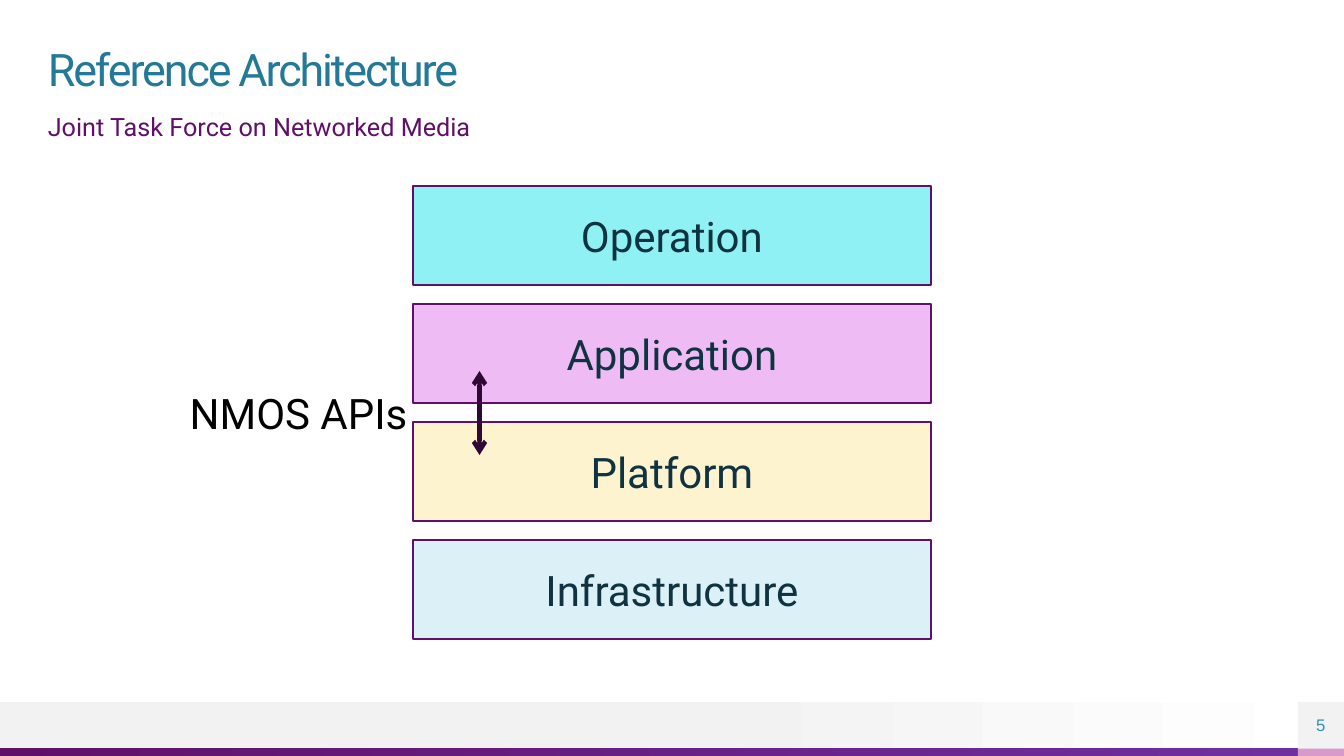
from lxml import etree
from pptx import Presentation
from pptx.dml.color import RGBColor
from pptx.enum.shapes import MSO_CONNECTOR, MSO_SHAPE
from pptx.enum.text import MSO_ANCHOR, MSO_AUTO_SIZE, PP_ALIGN
from pptx.oxml.ns import qn
from pptx.util import Pt

RECTANGLE = MSO_SHAPE.RECTANGLE
STRAIGHT = MSO_CONNECTOR.STRAIGHT
TOP, MIDDLE = MSO_ANCHOR.TOP, MSO_ANCHOR.MIDDLE
LEFT, CENTER = PP_ALIGN.LEFT, PP_ALIGN.CENTER
NO_FIT = MSO_AUTO_SIZE.NONE
GROW = MSO_AUTO_SIZE.SHAPE_TO_FIT_TEXT

# Content
TITLE = "Reference Architecture"
SUBTITLE = "Joint Task Force on Networked Media"
LAYERS = ["Operation", "Application", "Platform", "Infrastructure"]
API_LABEL = "NMOS APIs"
PAGE_NUMBER = "5"

COLORS = {
    "title": "237997", "purple": "601069", "violet": "7030A0",
    "pink": "D79ACB", "gray": "F2F2F2", "white": "FFFFFF",
    "number": "2C94BA", "layer text": "0F3340", "black": "000000",
    "arrow": "300834", "Operation": "90F1F4", "Application": "EFBBF5",
    "Platform": "FDF4CF", "Infrastructure": "DCF0F7",
}

# Layout in points
WIDTH, HEIGHT = 1152, 648
MARGIN, TEXT_WIDTH = 41, 1071.4
FOOTER_TOP, FOOTER_HEIGHT = 601.5, 40
STRIP_HEIGHT = HEIGHT - FOOTER_TOP - FOOTER_HEIGHT
NUMBER_WIDTH = 39.6
NUMBER_LEFT = WIDTH - NUMBER_WIDTH
LAYER_LEFT, LAYER_TOP = 354, 159.5
LAYER_WIDTH, LAYER_HEIGHT, LAYER_STEP = 444, 85, 101.15
ARROW_X, ARROW_TOP, ARROW_BOTTOM = 411, 318, 390


def color(name):
    return RGBColor.from_string(COLORS[name])


def points(*lengths):
    return [Pt(length) for length in lengths]


def write(shape, text, font, size, color_name, align=LEFT, anchor=MIDDLE):
    frame = shape.text_frame
    frame.vertical_anchor = anchor
    paragraph = frame.paragraphs[0]
    paragraph.text = text
    paragraph.alignment = align
    paragraph.font.name = font
    paragraph.font.size = Pt(size)
    paragraph.font.color.rgb = color(color_name)
    return paragraph


def remove_insets(shape):
    frame = shape.text_frame
    frame.margin_left = frame.margin_right = 0
    frame.margin_top = frame.margin_bottom = 0


def add_rectangle(box, fill_name):
    shape = slide.shapes.add_shape(RECTANGLE, *points(*box))
    shape.shadow.inherit = False
    shape.fill.solid()
    shape.fill.fore_color.rgb = color(fill_name)
    shape.line.fill.background()
    return shape


def add_gradient(box, start_name, end_name, start=0):
    shape = add_rectangle(box, start_name)
    shape.fill.gradient()
    shape.fill.gradient_angle = 0
    stops = zip(shape.fill.gradient_stops, (start, 1), (start_name, end_name))
    for stop, position, name in stops:
        stop.position = position
        stop.color.rgb = color(name)


presentation = Presentation()
presentation.slide_width, presentation.slide_height = points(WIDTH, HEIGHT)
slide = presentation.slides.add_slide(presentation.slide_layouts[5])

# Footer bands and page number
strip_top = FOOTER_TOP + FOOTER_HEIGHT
add_gradient((0, FOOTER_TOP, WIDTH, FOOTER_HEIGHT), "gray", "white", 0.53)
add_gradient((0, strip_top, NUMBER_LEFT, STRIP_HEIGHT), "purple", "violet")
add_rectangle((NUMBER_LEFT, strip_top, NUMBER_WIDTH, STRIP_HEIGHT), "pink")
number = add_rectangle(
    (NUMBER_LEFT, FOOTER_TOP, NUMBER_WIDTH, FOOTER_HEIGHT), "gray")
remove_insets(number)
write(number, PAGE_NUMBER, "Arial", 14.4, "number", CENTER)

# Title and subtitle
title = slide.shapes.title
title.left, title.top, title.width, title.height = points(
    MARGIN, 41, TEXT_WIDTH, 41)
remove_insets(title)
title.text_frame.auto_size = NO_FIT
heading = write(title, TITLE, "Roboto", 38.4, "title", anchor=TOP)
heading.line_spacing = 0.9
heading.runs[0]._r.get_or_add_rPr().set("spc", "-180")

subtitle = slide.shapes.add_textbox(*points(MARGIN, 95.3, TEXT_WIDTH, 34))
remove_insets(subtitle)
subtitle.text_frame.word_wrap = True
write(subtitle, SUBTITLE, "Roboto", 21.6, "purple", anchor=TOP)

# Stacked layers
for index, name in enumerate(LAYERS):
    top = LAYER_TOP + index * LAYER_STEP
    layer = add_rectangle((LAYER_LEFT, top, LAYER_WIDTH, LAYER_HEIGHT), name)
    layer.line.color.rgb = color("purple")
    layer.line.width = Pt(2)
    write(layer, name, "Roboto", 36, "layer text", CENTER)

# Interface label and double arrow
label = slide.shapes.add_textbox(*points(155.5, 328.5, 203, 51))
label.text_frame.word_wrap = False
label.text_frame.auto_size = GROW
write(label, API_LABEL, "Roboto", 36, "black", anchor=TOP)

arrow = slide.shapes.add_connector(
    STRAIGHT, *points(ARROW_X, ARROW_TOP, ARROW_X, ARROW_BOTTOM))
arrow.line.color.rgb = color("arrow")
arrow.line.width = Pt(3.75)
line = arrow.line._get_or_add_ln()
for end in ("a:headEnd", "a:tailEnd"):
    etree.SubElement(line, qn(end), type="arrow")
etree.SubElement(arrow._element.spPr, qn("a:effectLst"))

presentation.save("out.pptx")
